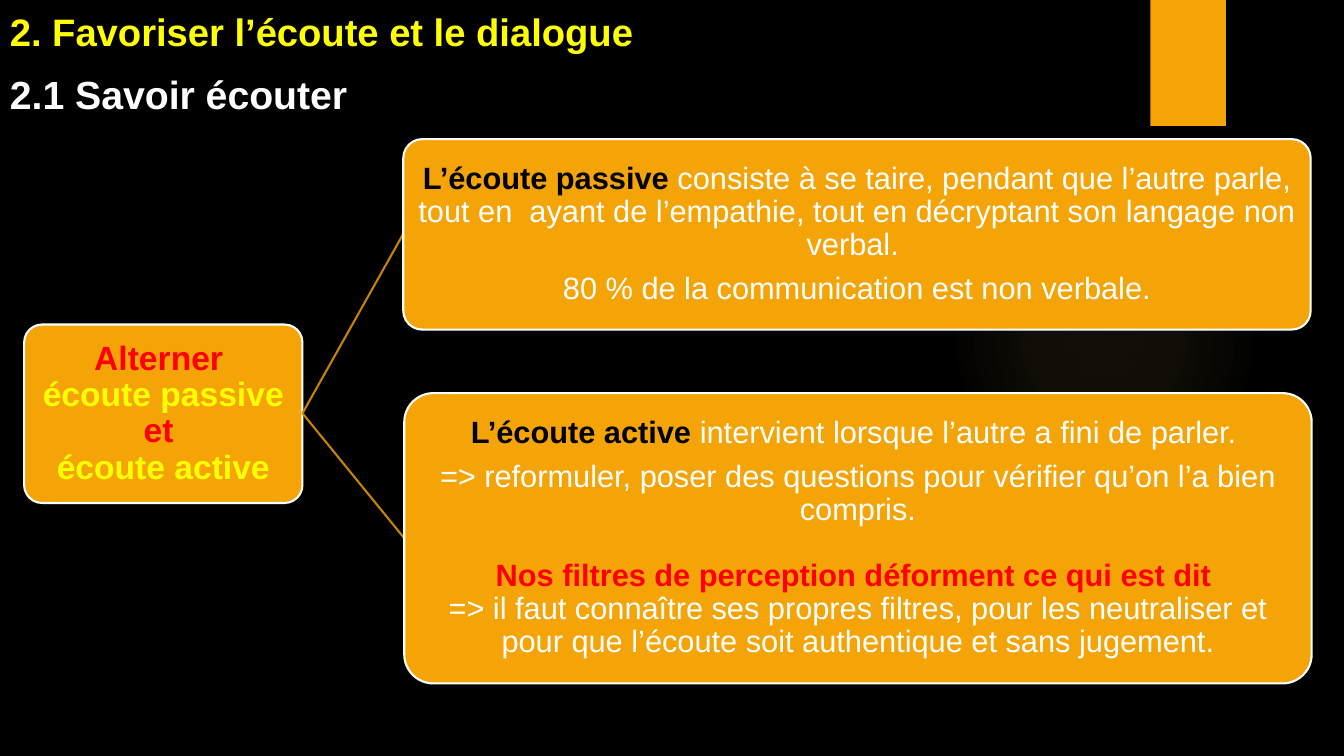
from dataclasses import dataclass

from lxml.etree import SubElement
from pptx import Presentation
from pptx.dml.color import RGBColor
from pptx.enum.shapes import MSO_CONNECTOR, MSO_SHAPE
from pptx.enum.text import MSO_ANCHOR, PP_ALIGN
from pptx.oxml import parse_xml
from pptx.oxml.ns import nsdecls, qn
from pptx.util import Emu, Pt

PX = 9144  # 100 px to the inch
FONT = "Arial"
BLACK, WHITE, RED, YELLOW = "000000", "FFFFFF", "FF0000", "FFFF00"
ORANGE, DARK_ORANGE, PALE_ORANGE = "F5A408", "C48306", "FAC96A"


@dataclass(frozen=True)
class Box:
    left: int
    top: int
    width: int
    height: int

    def emu(self) -> list[Emu]:
        return [px(n) for n in (self.left, self.top, self.width, self.height)]


@dataclass(frozen=True)
class Span:
    text: str
    color: str = WHITE
    bold: bool = False


@dataclass(frozen=True)
class Line:
    spans: tuple[Span, ...]
    before: float = 0
    after: float = 0


@dataclass(frozen=True)
class Card:
    box: Box
    size: int
    lines: tuple[Line, ...]


@dataclass(frozen=True)
class Heading:
    box: Box
    text: str
    color: str
    size: float
    anchor: MSO_ANCHOR


def px(n: int) -> Emu:
    return Emu(n * PX)


def rgb(value: str) -> RGBColor:
    return RGBColor.from_string(value)


def add_plain(slide, kind: MSO_SHAPE, box: Box, color: str):
    shape = slide.shapes.add_shape(kind, *box.emu())
    shape.shadow.inherit = False
    shape.fill.solid()
    shape.fill.fore_color.rgb = rgb(color)
    shape.line.fill.background()
    return shape


def add_glow(slide, box: Box) -> None:
    glow = add_plain(slide, MSO_SHAPE.OVAL, box, PALE_ORANGE)
    stops = "".join(
        f'<a:gs pos="{pos * 1000}"><a:srgbClr val="{PALE_ORANGE}">'
        f'<a:alpha val="{alpha * 1000}"/></a:srgbClr></a:gs>'
        for pos, alpha in ((0, 7), (36, 6), (69, 0), (100, 0))
    )
    gradient = parse_xml(
        f'<a:gradFill {nsdecls("a")}><a:gsLst>{stops}</a:gsLst><a:path path="circle">'
        '<a:fillToRect l="50000" t="50000" r="50000" b="50000"/></a:path></a:gradFill>'
    )
    properties = glow.element.spPr
    properties.replace(properties.find(qn("a:solidFill")), gradient)


def add_heading(slide, heading: Heading) -> None:
    frame = slide.shapes.add_textbox(*heading.box.emu()).text_frame
    frame.word_wrap = True
    frame.vertical_anchor = heading.anchor
    paragraph = frame.paragraphs[0]
    paragraph.text = heading.text
    font = paragraph.font
    font.name, font.size, font.bold = FONT, Pt(heading.size), True
    font.color.rgb = rgb(heading.color)


def add_card(slide, card: Card) -> None:
    shape = add_plain(slide, MSO_SHAPE.ROUNDED_RECTANGLE, card.box, ORANGE)
    shape.adjustments[0] = 0.1
    shape.line.color.rgb = rgb(WHITE)
    shape.line.width = Pt(1.5)
    frame = shape.text_frame
    frame.word_wrap = True
    frame.vertical_anchor = MSO_ANCHOR.MIDDLE
    frame.margin_left = frame.margin_right = px(2)
    frame.margin_top = frame.margin_bottom = px(2)
    for index, line in enumerate(card.lines):
        paragraph = frame.add_paragraph() if index else frame.paragraphs[0]
        paragraph.alignment = PP_ALIGN.CENTER
        paragraph.line_spacing = 0.9
        paragraph.space_before, paragraph.space_after = Pt(line.before), Pt(line.after)
        paragraph.font.name, paragraph.font.size = FONT, Pt(card.size)
        for span in line.spans:
            run = paragraph.add_run()
            run.text = span.text
            run.font.bold = span.bold
            run.font.color.rgb = rgb(span.color)


def add_branch(slide, start: Box, end: Box) -> None:
    branch = slide.shapes.add_connector(
        MSO_CONNECTOR.STRAIGHT,
        px(start.left + start.width), px(start.top + start.height // 2),
        px(end.left), px(end.top + end.height // 2),
    )
    branch.line.color.rgb = rgb(DARK_ORANGE)
    branch.line.width = Pt(1.5)
    SubElement(branch.element.spPr, qn("a:effectLst"))


HEADINGS = (
    Heading(Box(0, 0, 1314, 59), "2. Favoriser l’écoute et le dialogue", YELLOW, 27.3,
            MSO_ANCHOR.BOTTOM),
    Heading(Box(0, 65, 1196, 57), "2.1 Savoir écouter", WHITE, 28, MSO_ANCHOR.TOP),
)

ALTERNATE = Card(Box(24, 322, 276, 177), 24, (
    Line((Span("Alterner ", RED, True),)),
    Line((Span("écoute passive ", YELLOW, True), Span("et ", RED, True))),
    Line((Span("écoute active", YELLOW, True),)),
))

LISTENING_MODES = (
    Card(Box(400, 138, 900, 189), 22, (
        Line((
            Span("L’écoute passive ", BLACK, True),
            Span("consiste à se taire, pendant que l’autre parle, tout en  ayant de "
                 "l’empathie, tout en décryptant son langage non verbal. "),
        ), after=7.7),
        Line((Span("80 % de la communication est non verbale."),), after=7.7),
    )),
    Card(Box(401, 390, 900, 288), 22, (
        Line((
            Span("L’écoute active ", BLACK, True),
            Span("intervient lorsque l’autre a fini de parler. "),
        ), after=7.7),
        Line((Span("=> reformuler, poser des questions pour vérifier qu’on l’a bien "
                   "compris."),)),
        Line((Span("Nos filtres de perception déforment ce qui est dit ", RED, True),),
             before=23),
        Line((Span("=> il faut connaître ses propres filtres, pour les neutraliser et "
                   "pour que l’écoute soit authentique et sans jugement."),)),
    )),
)


def main() -> None:
    deck = Presentation()
    deck.slide_width, deck.slide_height = px(1333), px(750)
    slide = deck.slides.add_slide(deck.slide_layouts[6])

    # Backdrop
    slide.background.fill.solid()
    slide.background.fill.fore_color.rgb = rgb(BLACK)
    add_glow(slide, Box(941, 183, 308, 308))
    add_plain(slide, MSO_SHAPE.RECTANGLE, Box(1141, 0, 75, 125), ORANGE)

    # Headings
    for heading in HEADINGS:
        add_heading(slide, heading)

    # Tree of listening modes
    add_card(slide, ALTERNATE)
    for mode in LISTENING_MODES:
        add_branch(slide, ALTERNATE.box, mode.box)
        add_card(slide, mode)

    deck.save("out.pptx")


if __name__ == "__main__":
    main()
